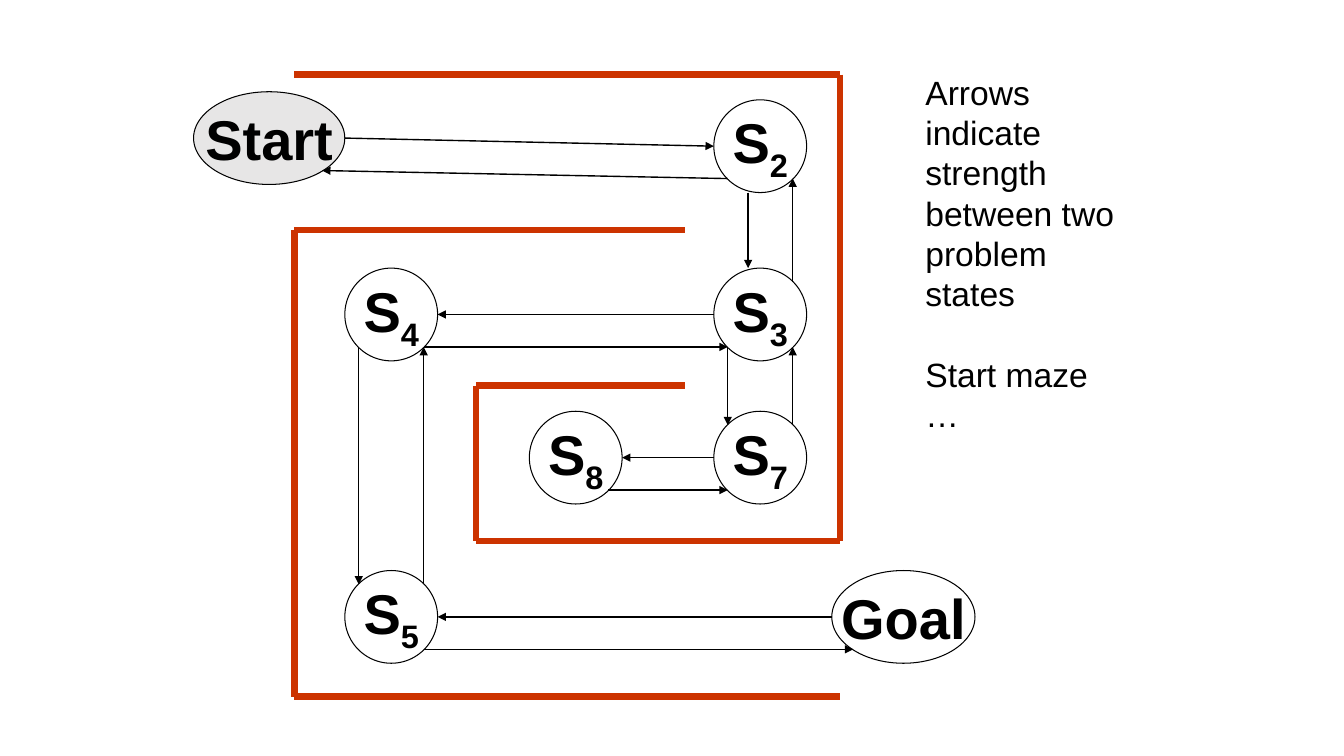
from lxml.etree import SubElement
from pptx import Presentation
from pptx.dml.color import RGBColor
from pptx.enum.shapes import MSO_CONNECTOR, MSO_SHAPE
from pptx.enum.text import MSO_ANCHOR, PP_ALIGN
from pptx.oxml.ns import qn
from pptx.util import Inches, Pt

COLORS = {"ink": "000000", "wall": "CC3300", "start": "E7E6E6", "state": "FFFFFF"}
FONT = "Arial"
NODE_HEIGHT = 0.92

# name: (label, subscript, left, top, width, fill)
NODES = {
    "start": ("Start", "", 1.92, 0.91, 1.5, "start"),
    "s2": ("S", "2", 7.08, 0.99, 0.92, "state"),
    "s3": ("S", "3", 7.08, 2.66, 0.92, "state"),
    "s4": ("S", "4", 3.42, 2.66, 0.92, "state"),
    "s5": ("S", "5", 3.42, 5.66, 0.92, "state"),
    "goal": ("Goal", "", 8.25, 5.66, 1.42, "state"),
    "s7": ("S", "7", 7.08, 4.08, 0.92, "state"),
    "s8": ("S", "8", 5.25, 4.08, 0.92, "state"),
}

# Where an arrow may touch a node, as fractions of its width and height
NEAR, FAR = 0.15, 0.85
SITES = {
    "left": (0, 0.5), "right": (1, 0.5),
    "top": (0.37, 0), "bottom": (0.37, 1),
    "top left": (NEAR, NEAR), "top right": (FAR, NEAR),
    "bottom left": (NEAR, FAR), "bottom right": (FAR, FAR),
}

ARROWS = [
    ("start", "right", "s2", "left"),
    ("s2", "bottom left", "start", "bottom right"),
    ("s2", "bottom", "s3", "top"),
    ("s3", "top right", "s2", "bottom right"),
    ("s3", "bottom left", "s7", "top left"),
    ("s7", "top right", "s3", "bottom right"),
    ("s7", "left", "s8", "right"),
    ("s8", "bottom right", "s7", "bottom left"),
    ("s4", "bottom right", "s3", "bottom left"),
    ("s3", "left", "s4", "right"),
    ("s4", "bottom left", "s5", "top left"),
    ("s5", "top right", "s4", "bottom right"),
    ("s5", "bottom right", "goal", "bottom left"),
    ("goal", "left", "s5", "right"),
]

# Maze grid: wall columns and evenly spaced wall rows
OUTER, INNER, GAP, EDGE = 2.92, 4.72, 6.79, 8.33
ROWS = [0.74 + 1.5425 * row for row in range(5)]
WALLS = [
    ((OUTER, ROWS[0]), (EDGE, ROWS[0])),
    ((OUTER, ROWS[4]), (EDGE, ROWS[4])),
    ((EDGE, ROWS[0]), (EDGE, ROWS[3])),
    ((OUTER, ROWS[1]), (OUTER, ROWS[4])),
    ((GAP, ROWS[1]), (OUTER, ROWS[1])),
    ((INNER, ROWS[2]), (GAP, ROWS[2])),
    ((INNER, ROWS[3]), (EDGE, ROWS[3])),
    ((INNER, ROWS[2]), (INNER, ROWS[3])),
]

NOTES = ["Arrows indicate strength between two problem states", "Start maze …"]
NOTE_LINE = 28.8


def color(name):
    return RGBColor.from_string(COLORS[name])


def add_span(para, text, size, bold=False):
    span = para.add_run()
    span.text = text
    span.font.name = FONT
    span.font.size = Pt(size)
    span.font.bold = bold
    span.font.color.rgb = color("ink")
    return span


def add_line(shapes, start, end, color_name, width):
    line = shapes.add_connector(
        MSO_CONNECTOR.STRAIGHT, *[Inches(length) for length in (*start, *end)])
    line.line.color.rgb = color(color_name)
    line.line.width = Pt(width)
    SubElement(line._element.spPr, qn("a:effectLst"))
    return line


def add_node(page, label, subscript, left, top, width, fill):
    node = page.shapes.add_shape(
        MSO_SHAPE.OVAL, Inches(left), Inches(top), Inches(width), Inches(NODE_HEIGHT))
    node.shadow.inherit = False
    node.fill.solid()
    node.fill.fore_color.rgb = color(fill)
    node.line.color.rgb = color("ink")
    node.line.width = Pt(0.75)
    frame = node.text_frame
    frame.word_wrap = False
    frame.vertical_anchor = MSO_ANCHOR.MIDDLE
    para = frame.paragraphs[0]
    para.alignment = PP_ALIGN.CENTER
    add_span(para, label, 40, True)
    if subscript:
        span = add_span(para, subscript, 40, True)
        span.font._element.set("baseline", "-25000")


def site_point(name, site):
    left, top, width = NODES[name][2:5]
    across, down = SITES[site]
    return left + across * width, top + down * NODE_HEIGHT


def add_arrow(page, source, source_site, target, target_site):
    arrow = add_line(page.shapes, site_point(source, source_site),
                     site_point(target, target_site), "ink", 1)
    SubElement(arrow.line._get_or_add_ln(), qn("a:tailEnd"), type="triangle")


def add_notes(page):
    box = page.shapes.add_textbox(Inches(9.08), Inches(0.66), Inches(2.17), Inches(3.74))
    frame = box.text_frame
    frame.word_wrap = True
    for index, note in enumerate(NOTES):
        para = frame.add_paragraph() if index else frame.paragraphs[0]
        para.line_spacing = Pt(NOTE_LINE)
        para.space_before = Pt(NOTE_LINE if index else 0)
        add_span(para, note, 24)


def main():
    deck = Presentation()
    deck.slide_width, deck.slide_height = Inches(13.33), Inches(7.5)
    page = deck.slides.add_slide(deck.slide_layouts[6])
    maze = page.shapes.add_group_shape()
    for start, end in WALLS:
        add_line(maze.shapes, start, end, "wall", 4.5)
    for node in NODES.values():
        add_node(page, *node)
    for arrow in ARROWS:
        add_arrow(page, *arrow)
    add_notes(page)
    deck.save("out.pptx")


if __name__ == "__main__":
    main()
